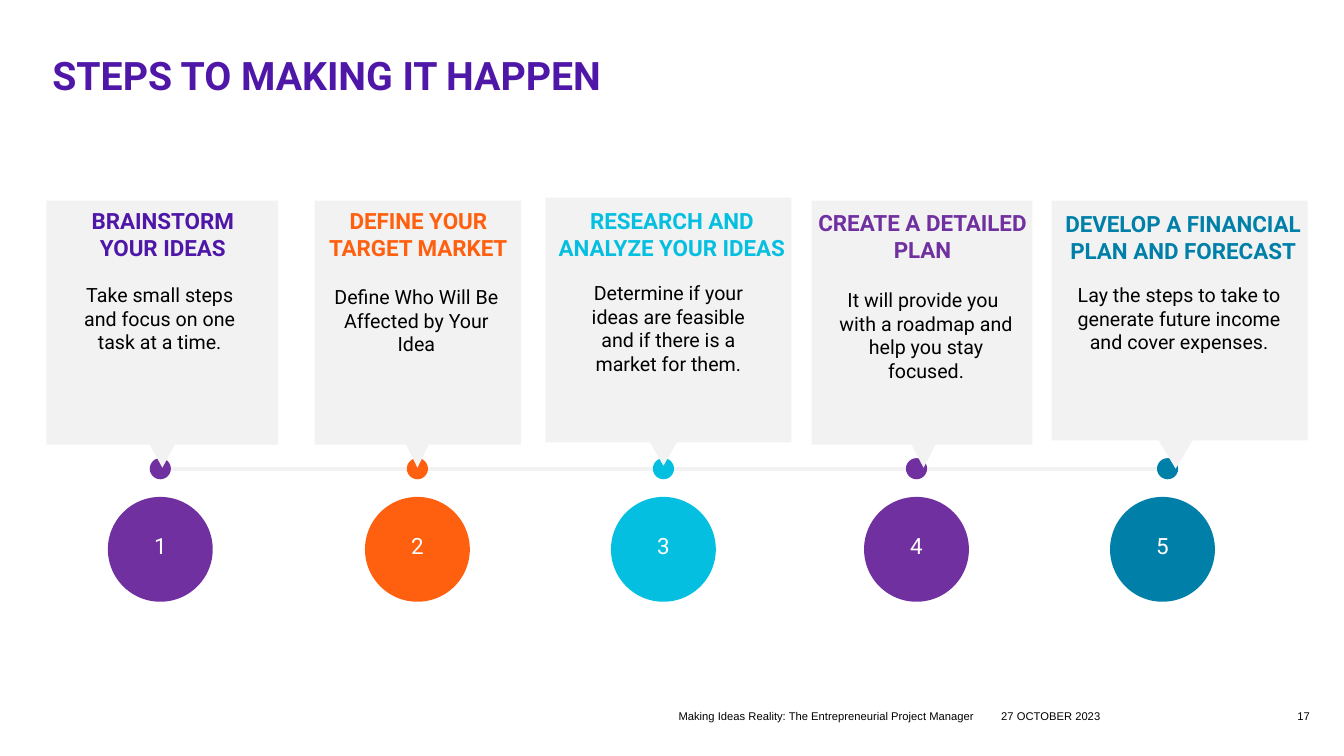
from dataclasses import dataclass

from lxml.etree import SubElement
from pptx import Presentation
from pptx.dml.color import RGBColor
from pptx.enum.shapes import MSO_CONNECTOR, MSO_SHAPE
from pptx.enum.text import MSO_ANCHOR, MSO_AUTO_SIZE, PP_ALIGN
from pptx.oxml.ns import qn
from pptx.util import Inches, Pt


@dataclass(frozen=True)
class Theme:
    heading_font: str = "Roboto"
    footer_font: str = "Arial"
    title_size: int = 28
    heading_size: int = 16
    body_size: int = 14
    footer_size: int = 8
    indigo: str = "4F17A8"
    purple: str = "7030A0"
    orange: str = "FF600F"
    cyan: str = "05BFE0"
    teal: str = "0080A8"
    card: str = "F2F2F2"
    black: str = "000000"
    white: str = "FFFFFF"


@dataclass(frozen=True)
class Step:
    """Text areas are (left, top, width) from the card's top left corner."""
    heading: str
    body: str
    color: str
    heading_color: str
    card: tuple
    heading_area: tuple
    body_area: tuple
    body_lines: int
    pointer_center: float
    pointer_tip: float
    marker_center: float
    dot_shift: float = 0
    hanging: float = 0


THEME = Theme()
TIMELINE_Y = 4.65
DOT_SIZE = 0.21
CIRCLE_SIZE = 1.04
CIRCLE_TOP = 4.93

STEPS = [
    Step("BRAINSTORM YOUR IDEAS",
         "Take small steps and focus on one task at a time.",
         THEME.purple, THEME.indigo, (0.46, 1.99, 2.3, 2.42),
         (0.15, 0.02, 2.01), (0.16, 0.77, 1.93), 3, 1.61, 4.64, 1.59),
    Step("DEFINE YOUR TARGET MARKET",
         "Define Who Will Be Affected by Your Idea",
         THEME.orange, THEME.orange, (3.12, 1.99, 2.05, 2.42),
         (-0.09, 0.02, 2.24), (0.07, 0.79, 1.88), 3, 4.14, 4.64, 4.14),
    Step("RESEARCH AND ANALYZE YOUR IDEAS",
         "Determine if your ideas are feasible and if there is a market for them.",
         THEME.cyan, THEME.cyan, (5.41, 1.96, 2.44, 2.43),
         (-0.01, 0.05, 2.53), (0.27, 0.78, 1.9), 4, 6.58, 4.62, 6.58),
    Step("CREATE A DETAILED PLAN",
         "It will provide you with a roadmap and help you stay focused.",
         THEME.purple, THEME.purple, (8.05, 1.99, 2.19, 2.42),
         (-0.14, 0.04, 2.48), (0.07, 0.82, 2.07), 4, 9.16, 4.64, 9.09,
         hanging=0.06),
    Step("DEVELOP A FINANCIAL PLAN AND FORECAST",
         "Lay the steps to take to generate future income and cover expenses.",
         THEME.teal, THEME.teal, (10.43, 1.99, 2.54, 2.38),
         (-0.07, 0.05, 2.75), (0.16, 0.77, 2.21), 4, 11.66, 4.65, 11.53,
         dot_shift=0.05),
]


def format_text(paragraph, size, color, font=THEME.heading_font, bold=False,
                alignment=PP_ALIGN.CENTER):
    paragraph.alignment = alignment
    for run in paragraph.runs:
        run.font.name = font
        run.font.size = Pt(size)
        run.font.bold = bold
        run.font.color.rgb = RGBColor.from_string(color)


def add_text(slide, box, text, size, color, **style):
    shape = slide.shapes.add_textbox(*map(Inches, box))
    shape.text_frame.word_wrap = True
    shape.text_frame.text = text
    format_text(shape.text_frame.paragraphs[0], size, color, **style)
    return shape


def add_filled(slide, kind, box, color):
    shape = slide.shapes.add_shape(kind, *map(Inches, box))
    shape.shadow.inherit = False
    shape.fill.solid()
    shape.fill.fore_color.rgb = RGBColor.from_string(color)
    shape.line.fill.background()
    return shape


def clear_margins(text_frame):
    text_frame.margin_left = text_frame.margin_right = 0
    text_frame.margin_top = text_frame.margin_bottom = 0


def add_title(slide, box, text):
    title = slide.shapes.title
    title.left, title.top, title.width, title.height = map(Inches, box)
    text_frame = title.text_frame
    clear_margins(text_frame)
    text_frame.vertical_anchor = MSO_ANCHOR.MIDDLE
    text_frame.text = text
    paragraph = text_frame.paragraphs[0]
    paragraph.line_spacing = 0.9
    format_text(paragraph, THEME.title_size, THEME.indigo, bold=True,
                alignment=PP_ALIGN.LEFT)


def add_timeline(slide, start, end):
    line = slide.shapes.add_connector(
        MSO_CONNECTOR.STRAIGHT, Inches(start), Inches(TIMELINE_Y),
        Inches(end), Inches(TIMELINE_Y))
    line.line.color.rgb = RGBColor.from_string(THEME.card)
    line.line.width = Pt(3)
    SubElement(line._element.spPr, qn("a:effectLst"))
    for step in STEPS:
        left = step.marker_center + step.dot_shift - DOT_SIZE / 2
        add_filled(slide, MSO_SHAPE.OVAL,
                   (left, TIMELINE_Y - DOT_SIZE / 2, DOT_SIZE, DOT_SIZE),
                   step.color)


def add_card(slide, step, box):
    left, top, width, _ = box
    add_filled(slide, MSO_SHAPE.RECTANGLE, box, THEME.card)
    pointer_width, pointer_height = width * 0.16, 0.34
    pointer = add_filled(
        slide, MSO_SHAPE.ISOSCELES_TRIANGLE,
        (step.pointer_center - pointer_width / 2,
         step.pointer_tip - pointer_height, pointer_width, pointer_height),
        THEME.card)
    pointer.rotation = 180

    def area_box(area, height):
        return left + area[0], top + area[1], area[2], height

    heading = add_text(slide, area_box(step.heading_area, 0.64), step.heading,
                       THEME.heading_size, step.heading_color, bold=True)
    body = add_text(slide, area_box(step.body_area, 0.1 + 0.235 * step.body_lines),
                    step.body, THEME.body_size, THEME.black)
    for shape in (heading, body):
        shape.text_frame.auto_size = MSO_AUTO_SIZE.SHAPE_TO_FIT_TEXT
    if step.hanging:
        properties = body.text_frame.paragraphs[0]._p.get_or_add_pPr()
        properties.set("marL", str(Inches(step.hanging)))
        properties.set("indent", str(-Inches(step.hanging)))


def add_number(slide, step, number):
    circle = add_filled(slide, MSO_SHAPE.OVAL,
                        (step.marker_center - CIRCLE_SIZE / 2, CIRCLE_TOP,
                         CIRCLE_SIZE, CIRCLE_SIZE), step.color)
    text_frame = circle.text_frame
    text_frame.vertical_anchor = MSO_ANCHOR.MIDDLE
    text_frame.margin_bottom = Inches(0.12)
    text_frame.text = str(number)
    format_text(text_frame.paragraphs[0], THEME.heading_size, THEME.white)


def add_footer(slide, top, height):
    for text, left, width, alignment in (
        ("Making Ideas Reality: The Entrepreneurial Project Manager",
         6.73, 3.06, PP_ALIGN.LEFT),
        ("27 OCTOBER 2023", 9.93, 1.99, PP_ALIGN.LEFT),
        ("17", 12.54, 0.45, PP_ALIGN.RIGHT),
    ):
        shape = add_text(slide, (left, top, width, height), text,
                         THEME.footer_size, THEME.black,
                         font=THEME.footer_font, alignment=alignment)
        clear_margins(shape.text_frame)
        shape.text_frame.vertical_anchor = MSO_ANCHOR.BOTTOM


def main():
    presentation = Presentation()
    presentation.slide_width = Inches(13.33)
    presentation.slide_height = Inches(7.5)
    slide = presentation.slides.add_slide(presentation.slide_layouts[5])
    add_title(slide, (0.52, 0.57, 12.64, 0.41), "STEPS TO MAKING IT HAPPEN")
    add_timeline(slide, 1.55, 11.67)
    for number, step in enumerate(STEPS, start=1):
        add_card(slide, step, step.card)
        add_number(slide, step, number)
    add_footer(slide, 6.95, 0.22)
    presentation.save("out.pptx")


if __name__ == "__main__":
    main()
